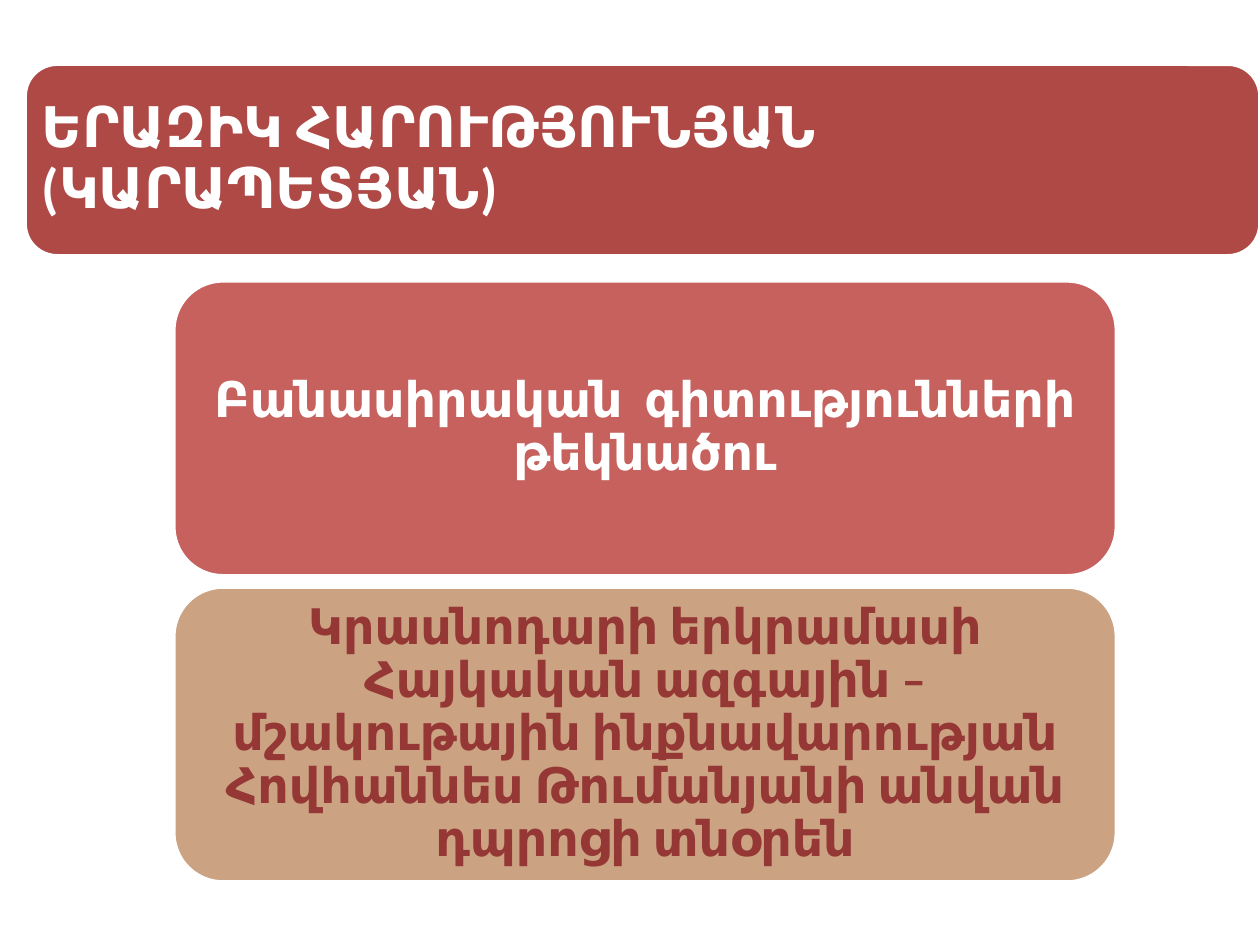
from pptx import Presentation
from pptx.dml.color import RGBColor
from pptx.enum.shapes import MSO_SHAPE
from pptx.enum.text import MSO_ANCHOR, MSO_AUTO_SIZE, PP_ALIGN
from pptx.oxml.ns import qn
from pptx.util import Inches, Pt
from lxml import etree

WHITE = RGBColor(0xFF, 0xFF, 0xFF)
BANNER_RED = RGBColor(0xAE, 0x49, 0x46)
CARD_RED = RGBColor(0xC0, 0x50, 0x4D)
CARD_BROWN = RGBColor(0x98, 0x48, 0x07)
DARK_RED = RGBColor(0x95, 0x37, 0x35)


def add_panel(slide, left, top, width, height, color, opacity=100):
    """Add a white-edged rounded panel; opacity is in percent."""
    panel = slide.shapes.add_shape(
        MSO_SHAPE.ROUNDED_RECTANGLE,
        Inches(left), Inches(top), Inches(width), Inches(height))
    panel.shadow.inherit = False
    panel.fill.solid()
    panel.fill.fore_color.rgb = color
    if opacity < 100:
        srgb = panel.fill._xPr.find(qn("a:solidFill")).find(qn("a:srgbClr"))
        etree.SubElement(srgb, qn("a:alpha")).set("val", str(opacity * 1000))
    panel.line.color.rgb = WHITE
    panel.line.width = Pt(2)
    return panel


def write_text(shape, text, size, color, align, inset):
    frame = shape.text_frame
    frame.text = text
    frame.word_wrap = True
    frame.auto_size = MSO_AUTO_SIZE.NONE
    frame.vertical_anchor = MSO_ANCHOR.MIDDLE
    frame.margin_left = frame.margin_right = Inches(inset)
    frame.margin_top = frame.margin_bottom = Inches(inset)
    paragraph = frame.paragraphs[0]
    paragraph.alignment = align
    paragraph.line_spacing = 0.9
    font = paragraph.runs[0].font
    font.name = "Calibri"
    font.size = Pt(size)
    font.bold = True
    font.color.rgb = color


prs = Presentation()
prs.slide_width, prs.slide_height = Inches(10), Inches(7.5)
slide = prs.slides.add_slide(prs.slide_layouts[5])

# Name banner, with the title placeholder laid over it
banner = add_panel(slide, 0.2, 0.51, 9.8, 1.52, BANNER_RED)
name = slide.shapes.title
name.left, name.top = banner.left, banner.top
name.width, name.height = banner.width, banner.height
write_text(name, "ԵՐԱԶԻԿ ՀԱՐՈՒԹՅՈՒՆՅԱՆ (ԿԱՐԱՊԵՏՅԱՆ)", 32, WHITE, PP_ALIGN.LEFT, 0.13)
banner._element.addnext(name._element)  # bring the title in front of the banner

# Degree and position cards
cards = [
    ("Բանասիրական  գիտությունների թեկնածու", CARD_RED, 90, WHITE),
    ("Կրասնոդարի երկրամասի Հայկական ազգային – մշակութային ինքնավարության "
     "Հովհաննես Թումանյանի անվան դպրոցի տնօրեն", CARD_BROWN, 50, DARK_RED),
]
CARD_TOP, CARD_HEIGHT, CARD_GAP = 2.23, 2.34, 0.09
for row, (text, fill, opacity, text_color) in enumerate(cards):
    top = CARD_TOP + row * (CARD_HEIGHT + CARD_GAP)
    card = add_panel(slide, 1.38, top, 7.48, CARD_HEIGHT, fill, opacity)
    # A rounded shape insets its text by its corners, so the margin stays small
    write_text(card, text, 28, text_color, PP_ALIGN.CENTER, 0.01)

prs.save("out.pptx")
